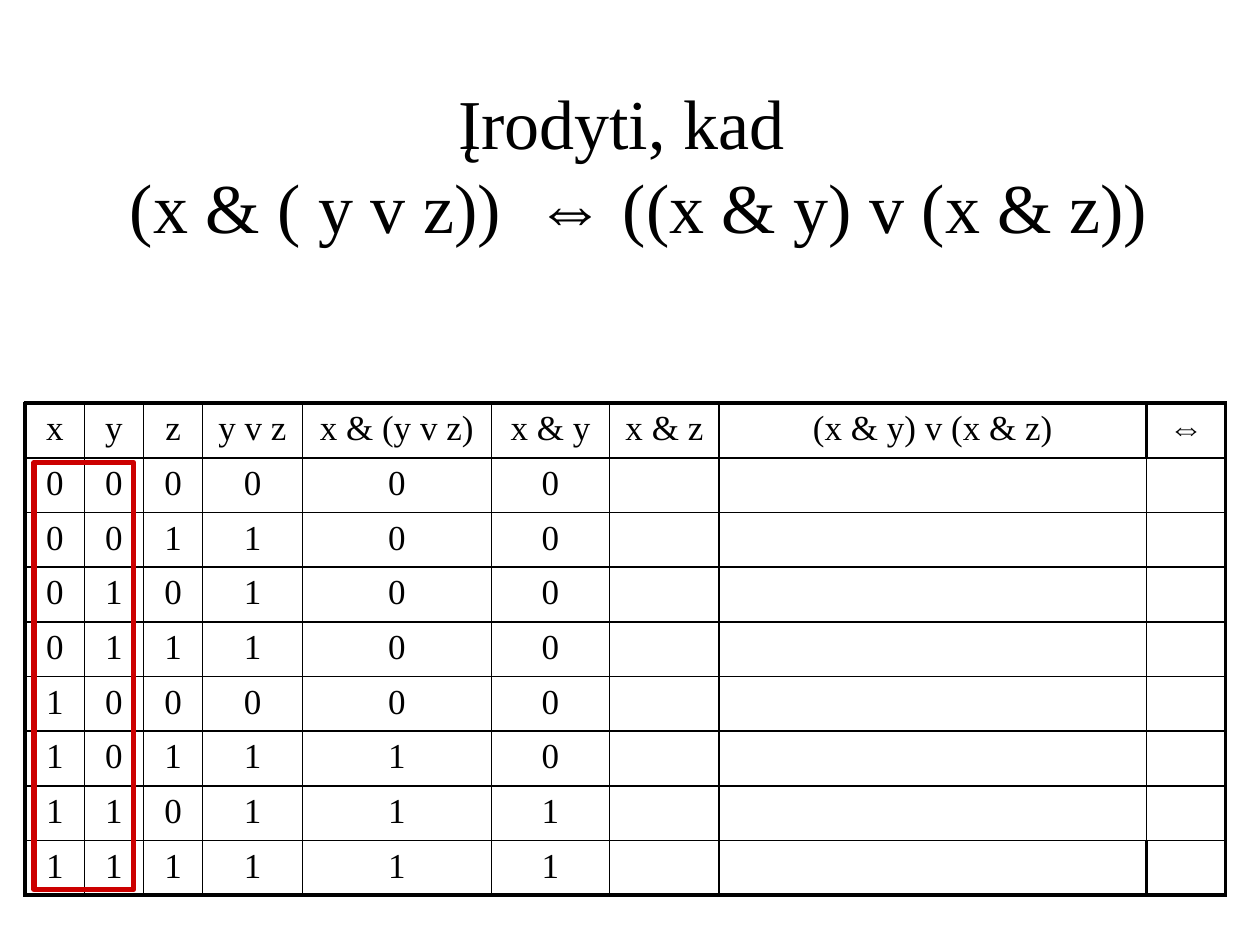
from itertools import product

from lxml.etree import SubElement
from pptx import Presentation
from pptx.dml.color import RGBColor
from pptx.enum.shapes import MSO_SHAPE as Shape
from pptx.enum.text import MSO_ANCHOR as Anchor, PP_ALIGN as Align
from pptx.oxml.ns import qn
from pptx.util import Inches, Pt

BLACK = RGBColor(0x00, 0x00, 0x00)
RED = RGBColor(0xCC, 0x00, 0x00)
FONT = "Times New Roman"
GRID = 0.1  # inches per grid step: 100 columns by 75 rows
THIN, THICK = Pt(1), Pt(2.25)

HEADERS = ["x", "y", "z", "y v z", "x & (y v z)", "x & y", "x & z",
           "(x & y) v (x & z)", "⇔"]
COLUMN_WIDTHS = [4.7, 4.7, 4.7, 7.9, 15, 9.4, 8.7, 33.9, 6.3]
ROW_HEIGHTS = [4.1] * 4 + [4.3] * 4 + [4.1]


def steps(count):
    return Inches(count * GRID)


class SlideBuilder:
    """Holds the style and the current slide; lengths are grid steps."""

    def __init__(self, presentation):
        self.slide = presentation.slides.add_slide(presentation.slide_layouts[6])

    def style(self, paragraph, size, bold=False):
        paragraph.alignment = Align.CENTER
        font = paragraph.font
        font.name, font.size, font.bold = FONT, Pt(size), bold
        font.color.rgb = BLACK

    def title(self, text, *box):
        frame = self.slide.shapes.add_textbox(*map(steps, box)).text_frame
        frame.word_wrap = True
        frame.vertical_anchor = Anchor.MIDDLE
        frame.text = text
        self.style(frame.paragraphs[0], 40)

    def outline(self, color, width, *box):
        shape = self.slide.shapes.add_shape(Shape.RECTANGLE, *map(steps, box))
        shape.shadow.inherit = False
        shape.fill.background()
        shape.line.color.rgb = color
        shape.line.width = Pt(width)

    def border(self, cell, side, width):
        properties = cell._tc.get_or_add_tcPr()
        line = SubElement(properties, qn(f"a:ln{side}"), w=str(width))
        fill = SubElement(line, qn("a:solidFill"))
        SubElement(fill, qn("a:srgbClr"), val=str(BLACK))

    def table(self, rows, left, top, widths, heights):
        table = self.slide.shapes.add_table(
            len(heights), len(widths), steps(left), steps(top),
            steps(sum(widths)), steps(sum(heights))).table
        table.first_row = table.horz_banding = False
        for column, width in zip(table.columns, widths):
            column.width = steps(width)
        for row, height in zip(table.rows, heights):
            row.height = steps(height)

        last_row, last_column = len(heights) - 1, len(widths) - 1
        for (r, c) in product(range(len(heights)), range(len(widths))):
            cell = table.cell(r, c)
            cell.text = rows[r][c]
            self.style(cell.text_frame.paragraphs[0], 20, bold=rows[r][c] == "⇔")
            # The last column is set off in the top and bottom rows
            end_row = r in (0, last_row)
            thick_sides = {
                "L": c == 0 or (end_row and c == last_column),
                "R": c == last_column or (end_row and c == last_column - 1),
                "T": r == 0,
                "B": r == last_row,
            }
            for side, thick in thick_sides.items():
                self.border(cell, side, THICK if thick else THIN)
            cell.fill.background()


def truth_rows():
    """Filled columns of the proof; the last three stay open."""
    for x, y, z in product((0, 1), repeat=3):
        values = [x, y, z, y | z, x & (y | z), x & y]
        yield [str(value) for value in values] + [""] * 3


def main():
    presentation = Presentation()
    presentation.slide_width = steps(100)
    presentation.slide_height = steps(75)
    builder = SlideBuilder(presentation)

    # Statement to prove
    builder.title("Įrodyti, kad \v (x & ( y v z))  ⇔ ((x & y) v (x & z))",
                  7.5, 6.7, 85, 12.5)
    # Truth table
    builder.table([HEADERS, *truth_rows()], 2, 32, COLUMN_WIDTHS, ROW_HEIGHTS)
    # Highlight around the x and y values
    builder.outline(RED, 3, 2.7, 36.7, 7.9, 33.9)

    presentation.save("out.pptx")


if __name__ == "__main__":
    main()
